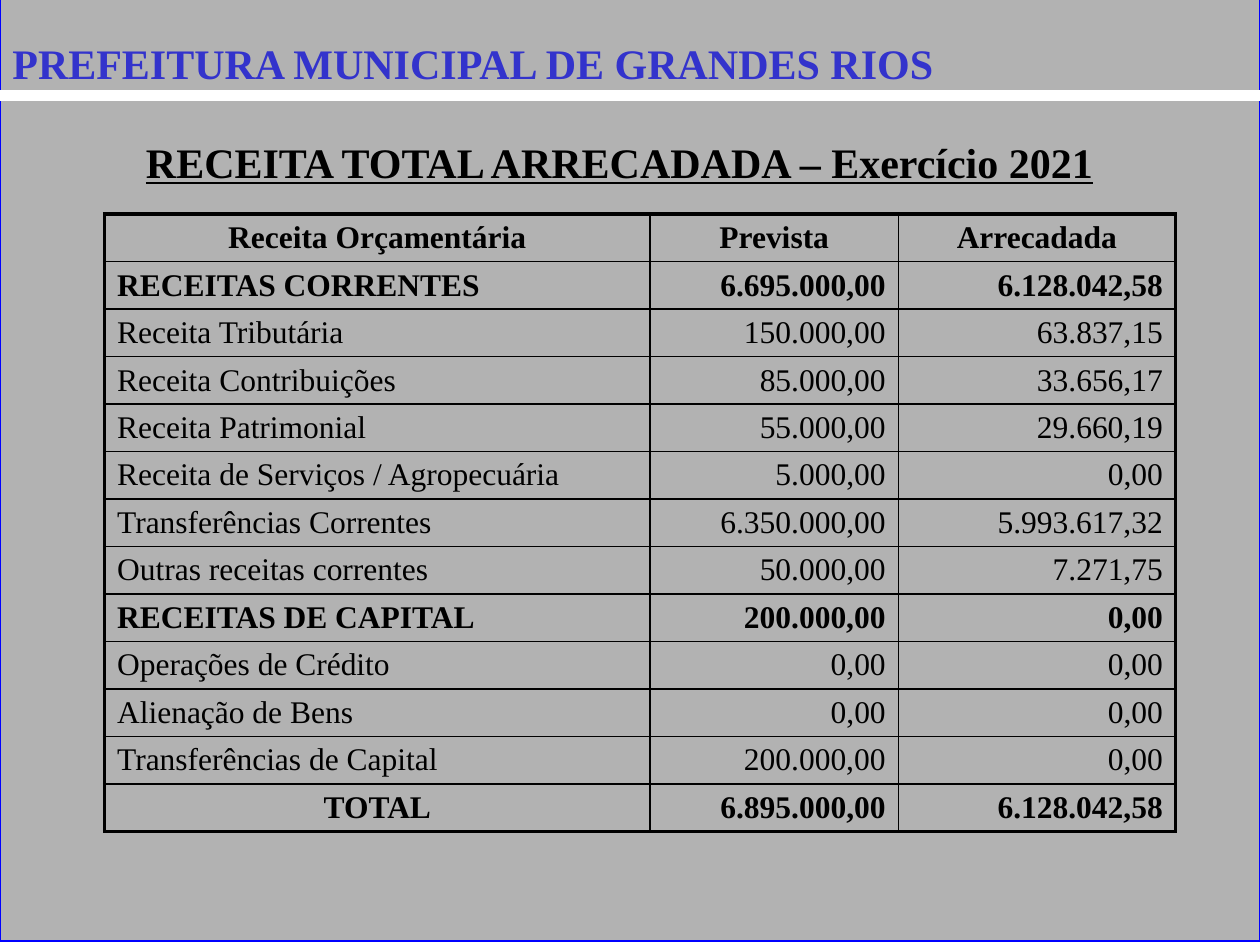
from lxml.etree import SubElement
from pptx import Presentation
from pptx.dml.color import RGBColor
from pptx.enum.shapes import MSO_CONNECTOR, MSO_SHAPE
from pptx.enum.text import MSO_ANCHOR, PP_ALIGN
from pptx.oxml import parse_xml
from pptx.oxml.ns import nsdecls, qn
from pptx.util import Inches, Pt

FONT = "Times New Roman"
BLACK = RGBColor(0x00, 0x00, 0x00)
WHITE = RGBColor(0xFF, 0xFF, 0xFF)
GRAY = RGBColor(0xB2, 0xB2, 0xB2)
BLUE = RGBColor(0x00, 0x00, 0xFF)
INDIGO = RGBColor(0x33, 0x33, 0xCC)

ORGANIZATION = "PREFEITURA MUNICIPAL DE GRANDES RIOS"
TITLE = "RECEITA TOTAL ARRECADADA – Exercício 2021"
ROWS = [
    ("Receita Orçamentária", "Prevista", "Arrecadada"),
    ("RECEITAS CORRENTES", "6.695.000,00", "6.128.042,58"),
    ("Receita Tributária", "150.000,00", "63.837,15"),
    ("Receita Contribuições", "85.000,00", "33.656,17"),
    ("Receita Patrimonial", "55.000,00", "29.660,19"),
    ("Receita de Serviços / Agropecuária", "5.000,00", "0,00"),
    ("Transferências Correntes", "6.350.000,00", "5.993.617,32"),
    ("Outras receitas correntes", "50.000,00", "7.271,75"),
    ("RECEITAS DE CAPITAL", "200.000,00", "0,00"),
    ("Operações de Crédito", "0,00", "0,00"),
    ("Alienação de Bens", "0,00", "0,00"),
    ("Transferências de Capital", "200.000,00", "0,00"),
    ("TOTAL", "6.895.000,00", "6.128.042,58"),
]
COLUMN_WIDTHS = (4.33, 1.97, 2.2)
TABLE_LEFT, TABLE_TOP, TABLE_HEIGHT = 0.83, 1.7, 4.9
OUTER, INNER = 2.25, 1


def write(tf, text, size=18, color=BLACK, bold=False, underline=False,
          align=PP_ALIGN.LEFT):
    p = tf.paragraphs[0]
    p.alignment = align
    r = p.add_run()
    r.text = text
    r.font.name = FONT
    r.font.size = Pt(size)
    r.font.color.rgb = color
    r.font.bold = bold
    r.font.underline = underline
    return r


def add_heading(s, left, top, width, height, text, **fmt):
    tf = s.shapes.add_textbox(*map(Inches, (left, top, width, height))).text_frame
    tf.word_wrap = True
    tf.margin_top = Inches(0.09)
    return write(tf, text, size=24, bold=True, **fmt)


def add_text_shadow(r):
    effects = parse_xml(
        f'<a:effectLst {nsdecls("a")}><a:outerShdw dist="35921" dir="2700000">'
        '<a:srgbClr val="808080"/></a:outerShdw></a:effectLst>')
    r.font._element.find(qn("a:solidFill")).addnext(effects)


def set_borders(cell, widths):
    """Draw black borders; widths are points for left, right, top, bottom."""
    tcPr = cell._tc.get_or_add_tcPr()
    for i, (side, width) in enumerate(zip("LRTB", widths)):
        ln = parse_xml(
            f'<a:ln{side} {nsdecls("a")} w="{Pt(width)}"><a:solidFill>'
            f'<a:srgbClr val="{BLACK}"/></a:solidFill></a:ln{side}>')
        tcPr.insert(i, ln)


def add_revenue_table(s):
    last_row, last_col = len(ROWS) - 1, len(COLUMN_WIDTHS) - 1
    table = s.shapes.add_table(
        len(ROWS), len(COLUMN_WIDTHS), Inches(TABLE_LEFT), Inches(TABLE_TOP),
        Inches(sum(COLUMN_WIDTHS)), Inches(TABLE_HEIGHT)).table
    table.first_row = table.horz_banding = False
    for column, width in zip(table.columns, COLUMN_WIDTHS):
        column.width = Inches(width)
    for i, row in enumerate(ROWS):
        table.rows[i].height = Inches(TABLE_HEIGHT / len(ROWS))
        bold = i == 0 or row[0].isupper()
        for j, text in enumerate(row):
            cell = table.cell(i, j)
            cell.fill.background()
            cell.vertical_anchor = MSO_ANCHOR.MIDDLE
            cell.margin_top = cell.margin_bottom = Inches(0.04)
            if i == 0 or text == "TOTAL":
                align = PP_ALIGN.CENTER
            else:
                align = PP_ALIGN.RIGHT if j else PP_ALIGN.LEFT
            write(cell.text_frame, text, bold=bold, align=align)
            on_edge = (j == 0, j == last_col, i == 0, i == last_row)
            set_borders(cell, [OUTER if edge else INNER for edge in on_edge])


prs = Presentation()
prs.slide_width, prs.slide_height = Inches(10), Inches(7.5)
s = prs.slides.add_slide(prs.slide_layouts[6])

panel = s.shapes.add_shape(MSO_SHAPE.RECTANGLE, 0, Inches(-0.03),
                           Inches(10), Inches(7.5))
panel.shadow.inherit = False
panel.fill.solid()
panel.fill.fore_color.rgb = GRAY
panel.line.color.rgb = BLUE
panel.line.width = Pt(0.75)

rule = s.shapes.add_connector(MSO_CONNECTOR.STRAIGHT, 0, Inches(0.76),
                              Inches(10), Inches(0.76))
rule.line.color.rgb = WHITE
rule.line.width = Pt(6)
SubElement(rule._element.spPr, qn("a:effectLst"))

add_revenue_table(s)
add_heading(s, 1.06, 0.99, 8.15, 0.5, TITLE, underline=True)
add_text_shadow(add_heading(s, 0, 0.21, 9.49, 0.5, ORGANIZATION, color=INDIGO))

prs.save("out.pptx")
